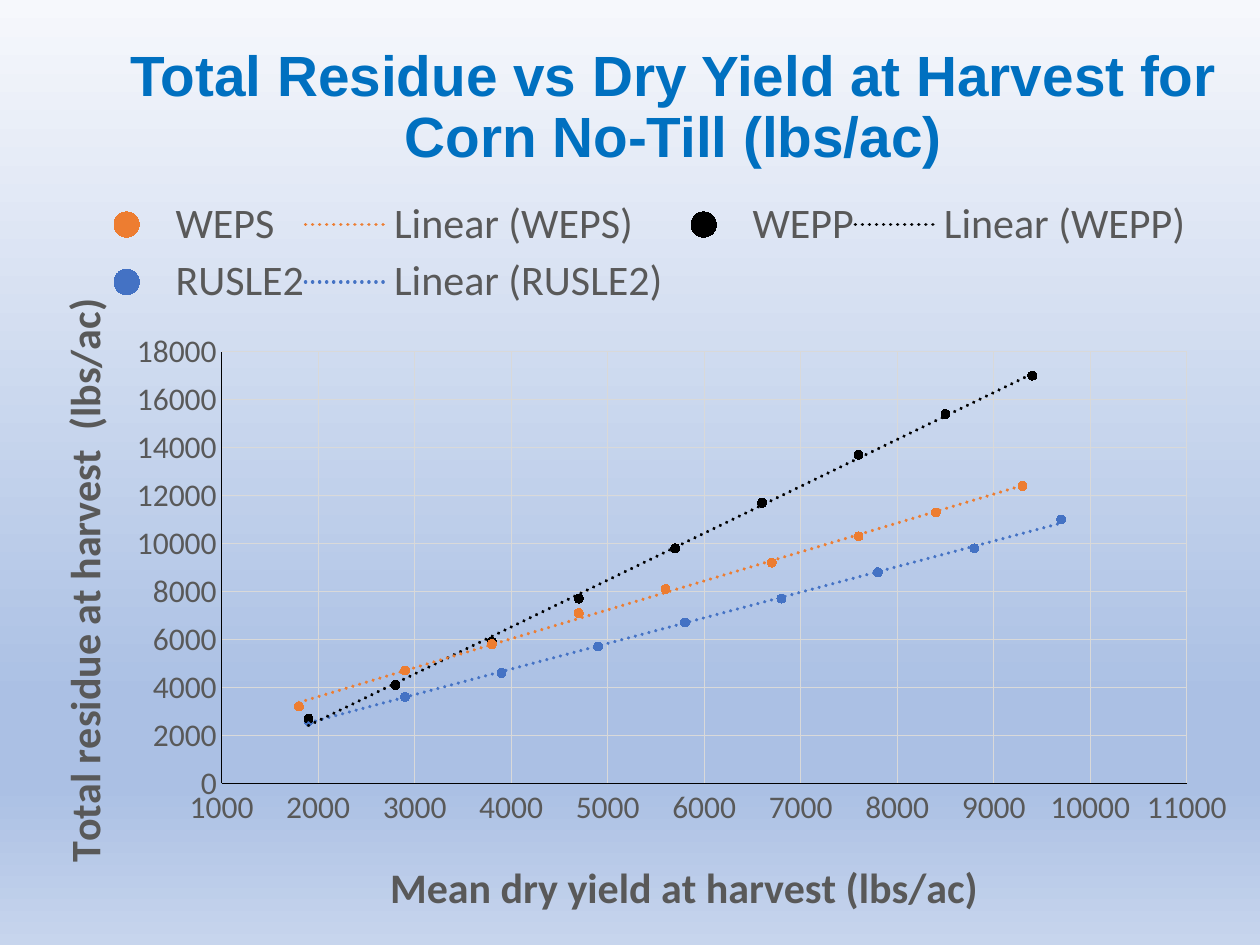
from lxml import etree
from pptx import Presentation
from pptx.chart.data import XyChartData
from pptx.dml.color import RGBColor
from pptx.enum.chart import XL_CHART_TYPE, XL_LEGEND_POSITION, XL_MARKER_STYLE, XL_TICK_MARK
from pptx.enum.text import MSO_ANCHOR, MSO_AUTO_SIZE, PP_ALIGN
from pptx.oxml import parse_xml
from pptx.oxml.ns import qn
from pptx.util import Inches, Pt

SCATTER = XL_CHART_TYPE.XY_SCATTER
LEGEND_TOP = XL_LEGEND_POSITION.TOP
CIRCLE = XL_MARKER_STYLE.CIRCLE
NO_TICK = XL_TICK_MARK.NONE
MIDDLE = MSO_ANCHOR.MIDDLE
NO_AUTOFIT = MSO_AUTO_SIZE.NONE
CENTER = PP_ALIGN.CENTER

NAMESPACES = (
    'xmlns:c="http://schemas.openxmlformats.org/drawingml/2006/chart" '
    'xmlns:a="http://schemas.openxmlformats.org/drawingml/2006/main"'
)
GRAY = "595959"
BLACK = "000000"
GRID = "D9D9D9"

# Position in percent, colour, opacity in percent
BACKGROUND_STOPS = [(0, "F6F8FC", 77), (74, "ABC0E4", 100), (83, "ABC0E4", 100), (100, "C7D5ED", 100)]

# Model name, colour, mean dry yields, total residues
MODELS = [
    ("WEPS", "ED7D31",
     [1800, 2900, 3800, 4700, 5600, 6700, 7600, 8400, 9300],
     [3200, 4700, 5800, 7100, 8100, 9200, 10300, 11300, 12400]),
    ("WEPP", BLACK,
     [1900, 2800, 3800, 4700, 5700, 6600, 7600, 8500, 9400],
     [2700, 4100, 5900, 7700, 9800, 11700, 13700, 15400, 17000]),
    ("RUSLE2", "4472C4",
     [1900, 2900, 3900, 4900, 5800, 6800, 7800, 8800, 9700],
     [2600, 3600, 4600, 5700, 6700, 7700, 8800, 9800, 11000]),
]


def rgb(color):
    return RGBColor.from_string(color)


def style_font(font, size, color, name="Calibri", bold=False):
    font.size, font.bold, font.name = Pt(size), bold, name
    font.color.rgb = rgb(color)


def style_line(line, color, width=0.75):
    line.color.rgb = rgb(color)
    line.width = Pt(width)


def set_background(slide):
    fill = slide.background.fill
    fill.gradient()
    fill.gradient_angle = 270
    stops = slide.element.find(".//" + qn("a:gsLst"))
    for stop in list(stops):
        stops.remove(stop)
    for position, color, opacity in BACKGROUND_STOPS:
        stop = etree.SubElement(stops, qn("a:gs"), pos=str(position * 1000))
        tint = etree.SubElement(stop, qn("a:srgbClr"), val=color)
        if opacity < 100:
            etree.SubElement(tint, qn("a:alpha"), val=str(opacity * 1000))


def set_title(slide, text):
    title = slide.shapes.title
    title.left, title.top = Inches(0.69), Inches(0.74)
    title.width, title.height = Inches(9.31), Inches(0.74)
    frame = title.text_frame
    frame.text = text
    frame.word_wrap = True
    frame.auto_size = NO_AUTOFIT
    frame.vertical_anchor = MIDDLE
    frame.margin_bottom = Inches(0.54)
    paragraph = frame.paragraphs[0]
    paragraph.alignment = CENTER
    paragraph.line_spacing = 0.9
    style_font(paragraph.runs[0].font, 32.4, "0070C0", "Arial", True)


def manual_layout(x, y, size=None, inner=False):
    """Return a c:layout element; places are fractions of the chart."""
    fields = [("xMode", "edge"), ("yMode", "edge"), ("x", x), ("y", y)]
    if inner:
        fields.insert(0, ("layoutTarget", "inner"))
    if size:
        fields += zip("wh", size)
    body = "".join(f'<c:{tag} val="{value}"/>' for tag, value in fields)
    return parse_xml(f"<c:layout {NAMESPACES}><c:manualLayout>{body}</c:manualLayout></c:layout>")


def replace_layout(parent, layout, previous_tag=None):
    """Put the layout after the previous tag, or first in the parent."""
    for old in parent.findall(qn("c:layout")):
        parent.remove(old)
    if previous_tag:
        parent.findall(qn(previous_tag))[-1].addnext(layout)
    else:
        parent.insert(0, layout)


def style_axis(axis, title, low, high, step, title_place):
    axis.minimum_scale, axis.maximum_scale, axis.major_unit = low, high, step
    axis.major_tick_mark = axis.minor_tick_mark = NO_TICK
    axis.has_major_gridlines = True
    style_line(axis.major_gridlines.format.line, GRID)
    style_line(axis.format.line, BLACK)
    axis.tick_labels.number_format = "0"
    axis.tick_labels.number_format_is_linked = False
    style_font(axis.tick_labels.font, 18, GRAY)
    frame = axis.axis_title.text_frame
    frame.text = title
    style_font(frame.paragraphs[0].runs[0].font, 24, GRAY, bold=True)
    replace_layout(axis.axis_title._element, manual_layout(*title_place), "c:tx")


def turn_title_upright(axis):
    body = axis.axis_title._element.find(".//" + qn("a:bodyPr"))
    body.set("rot", "-5400000")
    body.set("vert", "horz")


def add_trendline(series, color):
    trendline = parse_xml(
        f'<c:trendline {NAMESPACES}><c:spPr><a:ln w="{Pt(2)}" cap="rnd">'
        f'<a:solidFill><a:srgbClr val="{color}"/></a:solidFill>'
        '<a:prstDash val="sysDot"/></a:ln></c:spPr>'
        '<c:trendlineType val="linear"/><c:dispRSqr val="0"/><c:dispEq val="0"/></c:trendline>'
    )
    series._element.find(qn("c:xVal")).addprevious(trendline)


def style_series(series, color):
    series.format.line.fill.background()
    marker = series.marker
    marker.style, marker.size = CIRCLE, 5
    marker.format.fill.solid()
    marker.format.fill.fore_color.rgb = rgb(color)
    style_line(marker.format.line, color)
    add_trendline(series, color)


def add_legend(chart):
    chart.has_legend = True
    legend = chart.legend
    legend.position = LEGEND_TOP
    legend.include_in_layout = False
    style_font(legend.font, 24, GRAY)
    replace_layout(legend._element, manual_layout(0.06, 0.02, (0.89, 0.16)), "c:legendPos")


def add_residue_chart(slide):
    data = XyChartData()
    for name, _, yields, residues in MODELS:
        points = data.add_series(name)
        for dry_yield, residue in zip(yields, residues):
            points.add_data_point(dry_yield, residue)
    chart = slide.shapes.add_chart(
        SCATTER, Inches(0.09), Inches(1.41), Inches(9.82), Inches(6.01), data
    ).chart
    chart.has_title = False
    style_font(chart.font, 10, BLACK)
    plot = chart.plots[0]
    plot.vary_by_categories = False
    for series, (_, color, _, _) in zip(plot.series, MODELS):
        style_series(series, color)
    style_axis(chart.category_axis, "Mean dry yield at harvest (lbs/ac)",
               1000, 11000, 1000, (0.3, 0.89))
    style_axis(chart.value_axis, "Total residue at harvest  (lbs/ac)",
               0, 18000, 2000, (0.03, 0.15))
    turn_title_upright(chart.value_axis)
    add_legend(chart)
    plot_area = chart._chartSpace.find(".//" + qn("c:plotArea"))
    replace_layout(plot_area, manual_layout(0.17, 0.23, (0.78, 0.57), inner=True))


def main():
    deck = Presentation()
    deck.slide_width, deck.slide_height = Inches(10), Inches(7.5)
    slide = deck.slides.add_slide(deck.slide_layouts[5])
    set_background(slide)
    set_title(slide, "Total Residue vs Dry Yield at Harvest for Corn No-Till (lbs/ac)")
    add_residue_chart(slide)
    deck.save("out.pptx")


if __name__ == "__main__":
    main()
